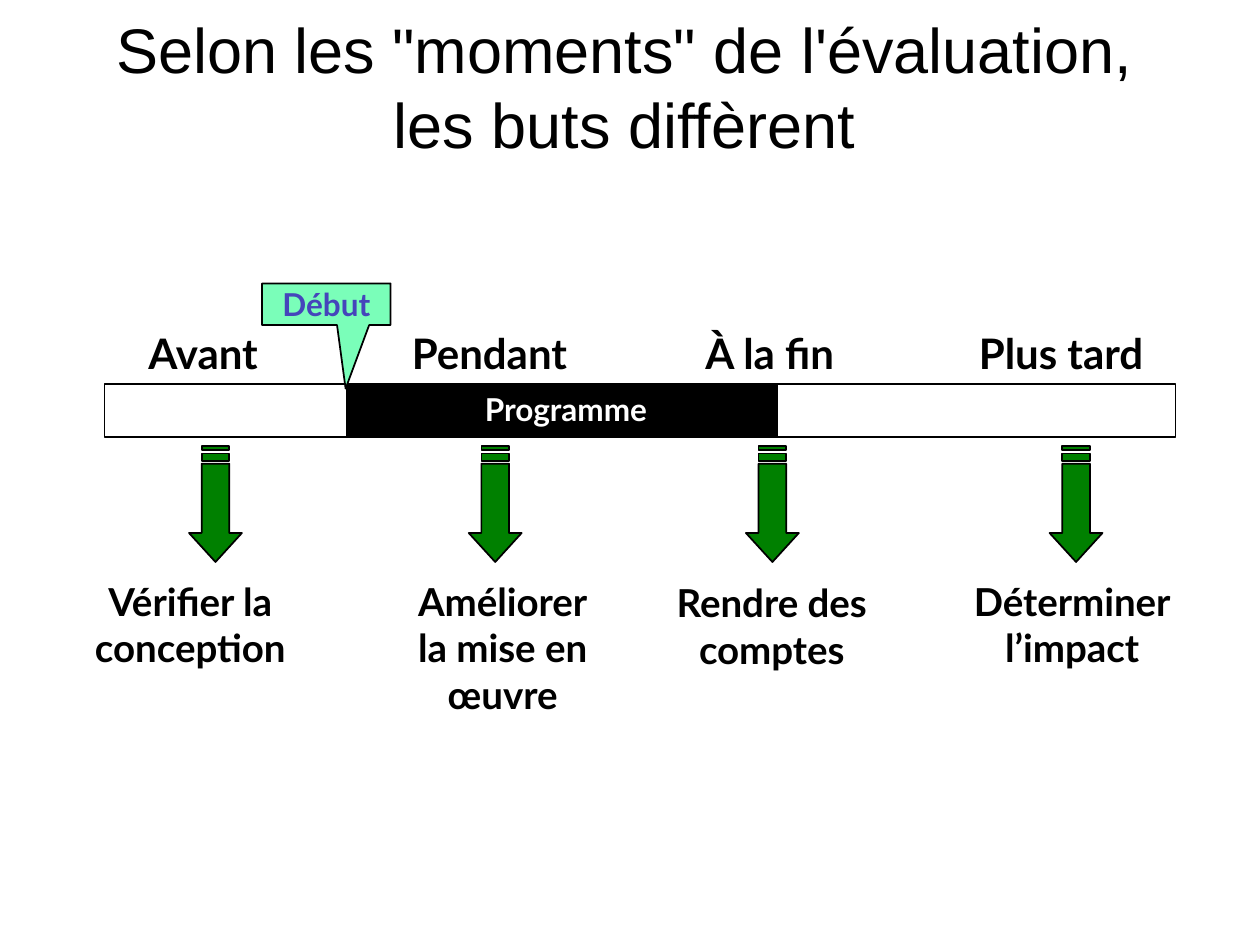
"""Build a slide showing how evaluation goals change along a programme timeline."""
from pptx import Presentation
from pptx.dml.color import RGBColor
from pptx.enum.shapes import MSO_SHAPE
from pptx.enum.text import MSO_ANCHOR, MSO_AUTO_SIZE, PP_ALIGN
from pptx.util import Inches, Pt

RECT, CALLOUT = MSO_SHAPE.RECTANGLE, MSO_SHAPE.RECTANGULAR_CALLOUT
LEFT, CENTER = PP_ALIGN.LEFT, PP_ALIGN.CENTER
MIDDLE = MSO_ANCHOR.MIDDLE
FIT = MSO_AUTO_SIZE.SHAPE_TO_FIT_TEXT
BLACK = RGBColor(0, 0, 0)
WHITE = RGBColor(255, 255, 255)
GREEN = RGBColor(0, 128, 0)
MINT = RGBColor(0x7A, 0xFE, 0xB9)
INDIGO = RGBColor(0x45, 0x45, 0xBB)


def write(s, text, size, color=BLACK, align=LEFT, wrap=False, font="Lato", bold=True):
    tf = s.text_frame
    tf.text = text
    tf.word_wrap = wrap
    for p in tf.paragraphs:
        p.alignment = align
        for r in p.runs:
            r.font.name = font
            r.font.size = Pt(size)
            r.font.bold = bold
            r.font.color.rgb = color
    return tf


def paint(s, fill=None):
    s.shadow.inherit = False
    if fill is None:
        s.fill.background()
    else:
        s.fill.solid()
        s.fill.fore_color.rgb = fill
    s.line.color.rgb = BLACK
    s.line.width = Pt(1)


prs = Presentation()
prs.slide_width, prs.slide_height = Inches(10), Inches(7.5)
slide = prs.slides.add_slide(prs.slide_layouts[5])
shapes = slide.shapes

title = shapes.title
title.left, title.top = Inches(0.64), Inches(0.03)
title.width, title.height = Inches(8.63), Inches(1.3)
tf = write(title, "Selon les \"moments\" de l'évaluation, les buts diffèrent", 36,
           align=CENTER, wrap=True, font="Arial", bold=False)
tf.vertical_anchor = MIDDLE

moments = [
    ("Avant", 1.08, 1.09, False),
    ("Pendant", 3.17, 1.48, False),
    ("À la fin", 5.5, 1.5, True),
    ("Plus tard", 7.67, 1.58, False),
]
for text, x, w, wrap in moments:
    s = shapes.add_textbox(Inches(x), Inches(2.55), Inches(w), Inches(0.5))
    write(s, text, 24, wrap=wrap).auto_size = FIT

goals = [
    ("Vérifier la conception", 0.5, 4.54, 2.02, 0.83, True),
    ("Améliorer\nla mise en\nœuvre", 3.07, 4.54, 1.84, 1.2, False),
    ("Rendre des comptes", 5.25, 4.55, 1.75, 1.2, True),
    ("Déterminer\nl’impact", 7.59, 4.54, 1.84, 0.83, False),
]
for text, x, y, w, h, wrap in goals:
    s = shapes.add_textbox(Inches(x), Inches(y), Inches(w), Inches(h))
    write(s, text, 22, align=CENTER, wrap=wrap).auto_size = FIT

arrow_parts = [
    [(69, 0), (69, 10.5), (14, 10.5), (14, 31.5), (69, 31.5), (69, 42), (92, 21)],
    [(6, 10.5), (6, 31.5), (12, 31.5), (12, 10.5)],
    [(0, 10.5), (0, 31.5), (3, 31.5), (3, 10.5)],
]
for x in (1.25, 3.47, 5.67, 8.08):
    builder = shapes.build_freeform(*arrow_parts[0][0], scale=Inches(0.01))
    builder.add_line_segments(arrow_parts[0][1:])
    for part in arrow_parts[1:]:
        builder.move_to(*part[0])
        builder.add_line_segments(part[1:])
    arrow = builder.convert_to_shape(Inches(x), Inches(3.79))
    arrow.rotation = 90
    paint(arrow, GREEN)

for x, w, fill in ((0.83, 8.5, None), (2.75, 3.42, BLACK)):
    bar = shapes.add_shape(RECT, Inches(x), Inches(3.05), Inches(w), Inches(0.42))
    paint(bar, fill)

s = shapes.add_textbox(Inches(3.75), Inches(3.05), Inches(1.54), Inches(0.4))
write(s, "Programme", 18, WHITE).auto_size = FIT

start = shapes.add_shape(CALLOUT, Inches(2.08), Inches(2.25), Inches(1.02), Inches(0.33))
start.adjustments[0], start.adjustments[1] = 0.15, 2.03
paint(start, MINT)
tf = write(start, "Début", 18, INDIGO, CENTER)
tf.vertical_anchor = MIDDLE
tf.margin_left = tf.margin_right = Inches(0.06)
tf.margin_top = tf.margin_bottom = Inches(0.01)

prs.save("out.pptx")
